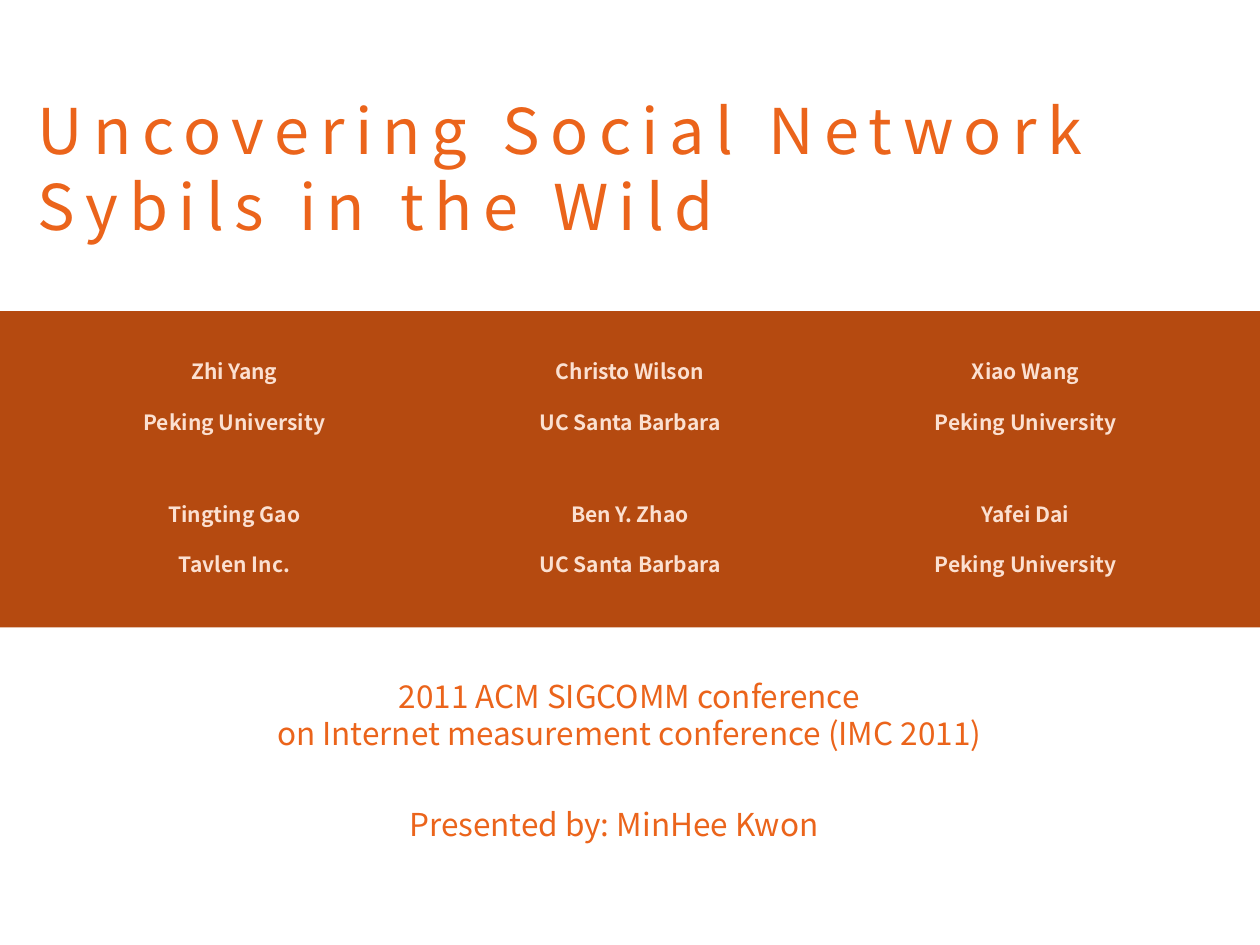
from dataclasses import dataclass

from lxml.etree import SubElement
from pptx import Presentation
from pptx.dml.color import RGBColor
from pptx.enum.shapes import MSO_SHAPE as Shape
from pptx.enum.text import MSO_ANCHOR as Anchor, MSO_AUTO_SIZE as AutoSize, PP_ALIGN as Align
from pptx.oxml.ns import qn
from pptx.util import Inches, Pt

TITLE = "Uncovering Social Network Sybils in the Wild"
AUTHORS = [
    [("Zhi Yang", "Peking University"),
     ("Christo Wilson", "UC Santa Barbara"),
     ("Xiao Wang", "Peking University")],
    [("Tingting Gao", "Tavlen Inc."),
     ("Ben Y. Zhao", "UC Santa Barbara"),
     ("Yafei Dai", "Peking University")],
]
VENUE = ["2011 ACM SIGCOMM conference", "on Internet measurement conference (IMC 2011)"]
PRESENTER = ["Presented by: MinHee Kwon"]


@dataclass(frozen=True)
class Theme:
    font: str = "Noto Sans CJK KR"
    accent: RGBColor = RGBColor(0xEB, 0x64, 0x1B)
    band: RGBColor = RGBColor(0xB5, 0x4A, 0x10)
    pale: RGBColor = RGBColor(0xFB, 0xE0, 0xD1)
    title_size: int = 36
    text_size: int = 18
    table_size: int = 12
    title_tracking: int = 6
    leading: float = 1.2


THEME = Theme()
WIDTH, HEIGHT = 10, 7.5
BAND = (0, 2.47, WIDTH, 2.51)
TITLE_AREA = (0.2, 0.68, 8.9, 1.31)
VENUE_AREA = (1.71, 5.32, 6.57, 0.71)
PRESENTER_AREA = (3.15, 6.34, 3.7, 0.4)
TABLE_LEFT, TABLE_TOP = 0.29, 2.77
ROW_HEIGHT, GAP_HEIGHT = 0.4, 0.33


def area(lengths):
    return [Inches(length) for length in lengths]


def place(shape, lengths):
    shape.left, shape.top, shape.width, shape.height = area(lengths)


def write(para, text, size, color, align=Align.LEFT, bold=False):
    para.alignment = align
    span = para.add_run()
    span.text = text
    span.font.name = THEME.font
    span.font.size = Pt(size)
    span.font.bold = bold
    span.font.color.rgb = color
    return span


def write_lines(box, lines, size, align=Align.LEFT):
    frame = box.text_frame
    frame.word_wrap = True
    frame.auto_size = AutoSize.NONE
    frame.vertical_anchor = Anchor.TOP
    spans = []
    for index, line in enumerate(lines):
        para = frame.add_paragraph() if index else frame.paragraphs[0]
        para.space_before = Pt(0)
        para.line_spacing = Pt(round(size * THEME.leading, 1))
        spans.append(write(para, line, size, THEME.accent, align))
    return spans


def clear_cell(cell):
    properties = cell._tc.get_or_add_tcPr()
    for side in ("lnL", "lnR", "lnT", "lnB"):
        border = SubElement(properties, qn(f"a:{side}"), w="0")
        SubElement(border, qn("a:noFill"))
    cell.fill.background()


def add_authors(page):
    rows = []
    for group in AUTHORS:
        if rows:
            rows.append([""] * len(group))
        rows.extend(zip(*group))
    heights = [ROW_HEIGHT if any(row) else GAP_HEIGHT for row in rows]
    lengths = (TABLE_LEFT, TABLE_TOP, WIDTH - 2 * TABLE_LEFT, sum(heights))
    table = page.shapes.add_table(len(rows), len(rows[0]), *area(lengths)).table
    table.first_row = table.horz_banding = False
    for row_index, (row, height) in enumerate(zip(rows, heights)):
        table.rows[row_index].height = Inches(height)
        for column_index, text in enumerate(row):
            cell = table.cell(row_index, column_index)
            clear_cell(cell)
            cell.margin_top, cell.margin_bottom = area((0.05, 0))
            cell.vertical_anchor = Anchor.TOP
            para = cell.text_frame.paragraphs[0]
            if text:
                write(para, text, THEME.table_size, THEME.pale, Align.CENTER, True)
            else:
                para._p.get_or_add_endParaRPr().set("sz", str(THEME.table_size * 100))


def main():
    deck = Presentation()
    deck.slide_width, deck.slide_height = area((WIDTH, HEIGHT))
    page = deck.slides.add_slide(deck.slide_layouts[0])

    band = page.shapes.add_shape(Shape.RECTANGLE, *area(BAND))
    band.shadow.inherit = False
    band.fill.solid()
    band.fill.fore_color.rgb = THEME.band
    band.line.fill.background()

    title, venue = page.placeholders
    place(title, TITLE_AREA)
    for span in write_lines(title, [TITLE], THEME.title_size):
        span.font._element.set("spc", str(THEME.title_tracking * 100))

    add_authors(page)

    place(venue, VENUE_AREA)
    write_lines(venue, VENUE, THEME.text_size, Align.CENTER)
    presenter = page.shapes.add_textbox(*area(PRESENTER_AREA))
    write_lines(presenter, PRESENTER, THEME.text_size)

    deck.save("out.pptx")


if __name__ == "__main__":
    main()
